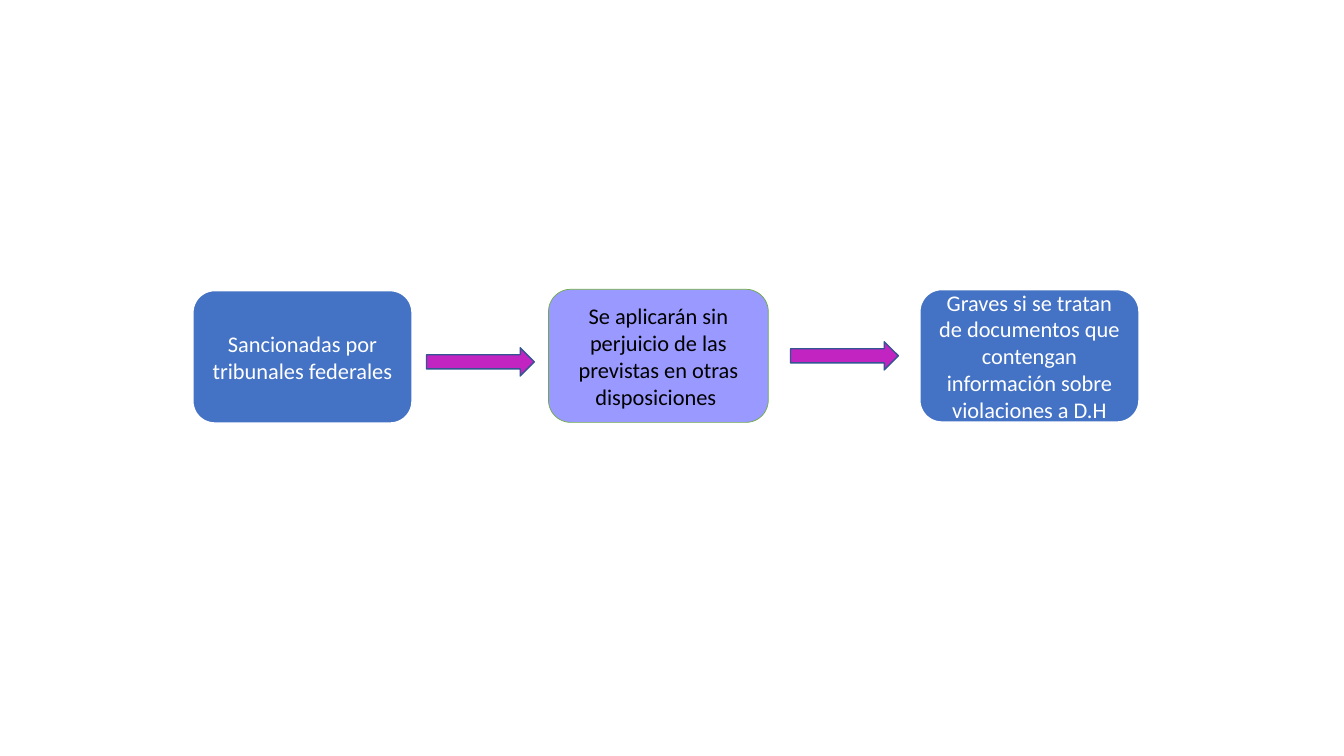
import pptx
import pptx.dml.color
import pptx.enum.shapes
import pptx.enum.text
import pptx.util

SHAPES = pptx.enum.shapes.MSO_SHAPE
Inches = pptx.util.Inches


def color(hex_code):
    return pptx.dml.color.RGBColor.from_string(hex_code)


def add_block(kind, left, top, width, height, fill, line, line_width):
    block = slide.shapes.add_shape(
        kind, Inches(left), Inches(top), Inches(width), Inches(height))
    block.shadow.inherit = False
    block.fill.solid()
    block.fill.fore_color.rgb = color(fill)
    block.line.color.rgb = color(line)
    block.line.width = pptx.util.Pt(line_width)
    return block


deck = pptx.Presentation()
deck.slide_width = Inches(13.33)
deck.slide_height = Inches(7.5)
slide = deck.slides.add_slide(deck.slide_layouts[6])

# Sanction steps: left, top, fill, line, line width, text colour, wording
STEP_WIDTH, STEP_HEIGHT = 2.18, 1.32
steps = [
    (1.91, 2.88, "4472C4", "FFFFFF", 1.5, "FFFFFF",
     "Sancionadas por tribunales federales"),
    (5.44, 2.87, "9999FF", "70AD47", 0.5, "000000",
     "Se aplicarán sin perjuicio de las previstas en otras disposiciones "),
    (9.12, 2.87, "4472C4", "FFFFFF", 1.5, "FFFFFF",
     "Graves si se tratan de documentos que contengan información sobre "
     "violaciones a D.H"),
]
for left, top, fill, line, line_width, text_color, wording in steps:
    step = add_block(SHAPES.ROUNDED_RECTANGLE, left, top, STEP_WIDTH,
                     STEP_HEIGHT, fill, line, line_width)
    frame = step.text_frame
    frame.word_wrap = True
    frame.vertical_anchor = pptx.enum.text.MSO_ANCHOR.MIDDLE
    paragraph = frame.paragraphs[0]
    paragraph.text = wording
    paragraph.alignment = pptx.enum.text.PP_ALIGN.CENTER
    paragraph.font.name = "Calibri"
    paragraph.font.size = pptx.util.Pt(16)
    paragraph.font.color.rgb = color(text_color)

# Arrows between the steps
for left, top in [(4.23, 3.45), (7.84, 3.39)]:
    add_block(SHAPES.RIGHT_ARROW, left, top, 1.07, 0.28,
              "C224C2", "325491", 1)

deck.save("out.pptx")
